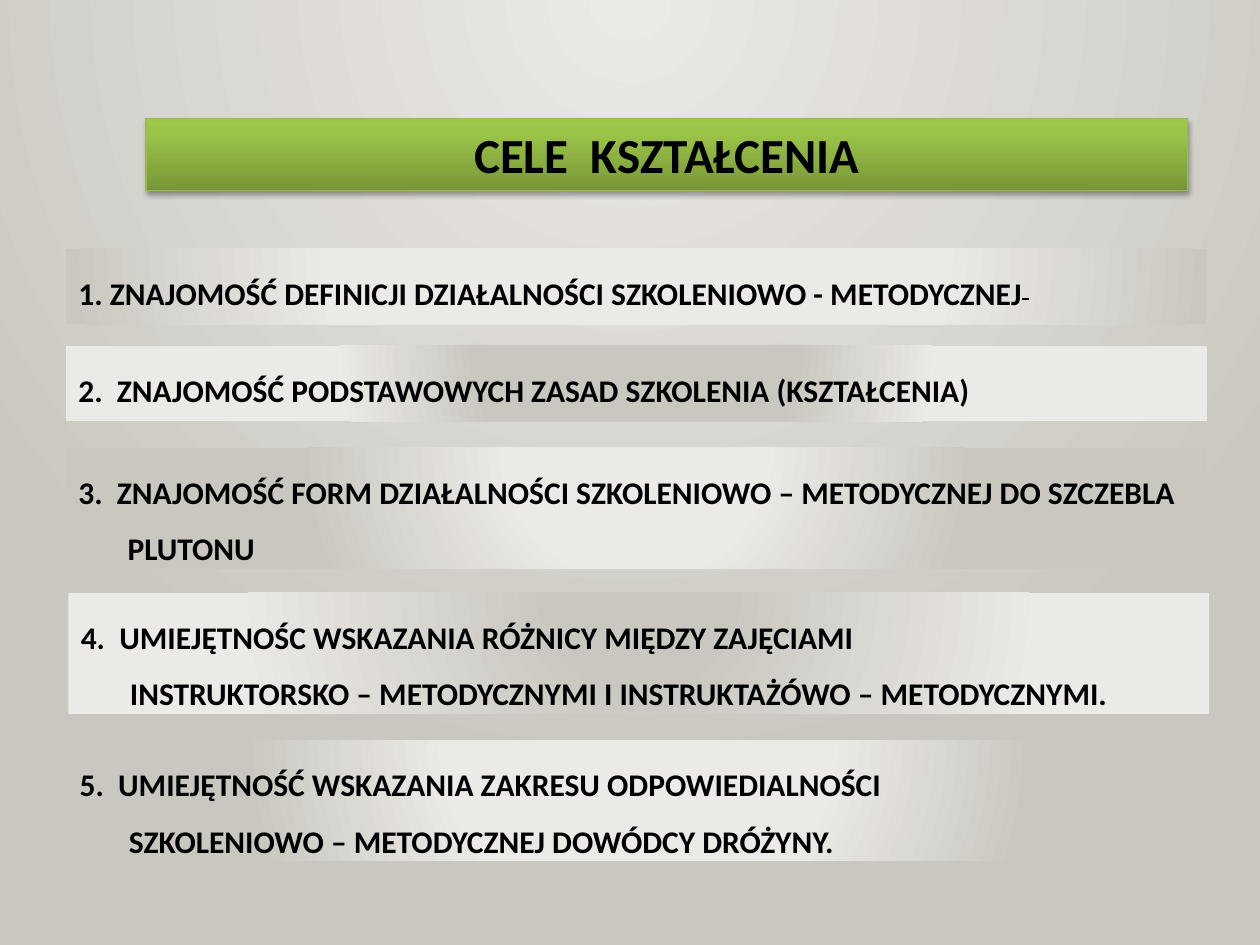
from lxml.etree import SubElement
from pptx import Presentation
from pptx.dml.color import RGBColor
from pptx.enum.shapes import MSO_SHAPE
from pptx.enum.text import MSO_ANCHOR, MSO_AUTO_SIZE, PP_ALIGN
from pptx.oxml.ns import qn
from pptx.util import Inches, Pt

# The slide is a grid of 100 columns by 75 rows, each 0.1 inch
CELL = Inches(0.1)
COLUMNS, ROWS = 100, 75
LIGHT, DARK, BLACK = "ECEAE7", "CAC7C1", "000000"

TITLE = "CELE  KSZTAŁCENIA"
TITLE_BOX = (11.6, 9.43, 82.65, 5.7)

GOAL_WIDTH = 90.55
# left, top, height, gradient stops from the centre outwards, text
GOALS = [
    (5.24, 19.75, 6, [(53, LIGHT), (100, DARK)],
     "1. ZNAJOMOŚĆ DEFINICJI DZIAŁALNOŚCI SZKOLENIOWO - METODYCZNEJ"),
    (5.24, 27.44, 6, [(28, DARK), (53, LIGHT)],
     "2.  ZNAJOMOŚĆ PODSTAWOWYCH ZASAD SZKOLENIA (KSZTAŁCENIA)"),
    (5.24, 35.53, 9.6, [(22, LIGHT), (59, DARK)],
     "3.  ZNAJOMOŚĆ FORM DZIAŁALNOŚCI SZKOLENIOWO – METODYCZNEJ DO SZCZEBLA PLUTONU"),
    (5.43, 47.04, 9.6, [(15, DARK), (71, LIGHT)],
     "4.  UMIEJĘTNOŚC WSKAZANIA RÓŻNICY MIĘDZY ZAJĘCIAMI\v"
     "INSTRUKTORSKO – METODYCZNYMI I INSTRUKTAŻÓWO – METODYCZNYMI."),
    (5.34, 58.75, 9.55, [(33, LIGHT), (69, DARK)],
     "5.  UMIEJĘTNOŚĆ WSKAZANIA ZAKRESU ODPOWIEDIALNOŚCI\v"
     "SZKOLENIOWO – METODYCZNEJ DOWÓDCY DRÓŻYNY."),
]


def color(value):
    return RGBColor.from_string(value)


def set_gradient(owner, fill, stops, angle=None):
    """Linear gradient when an angle is given, else circles from the top centre."""
    fill.gradient()
    gradient = owner.element.find(".//" + qn("a:gradFill"))
    for child in list(gradient):
        gradient.remove(child)
    stop_list = SubElement(gradient, qn("a:gsLst"))
    for position, value in stops:
        stop = SubElement(stop_list, qn("a:gs"), pos=str(position * 1000))
        SubElement(stop, qn("a:srgbClr"), val=value)
    if angle is None:
        circle = SubElement(gradient, qn("a:path"), path="circle")
        SubElement(circle, qn("a:fillToRect"), l="43000", t="0", r="43000", b="100000")
    else:
        SubElement(gradient, qn("a:lin"), ang=str(angle * 60000), scaled="0")


def add_shadow(shape, value, opacity, blur, distance, angle):
    effects = shape.element.spPr.find(qn("a:effectLst"))
    shadow = SubElement(effects, qn("a:outerShdw"), blurRad=str(Pt(blur)),
                        dist=str(Pt(distance)), dir=str(angle * 60000), rotWithShape="0")
    shade = SubElement(shadow, qn("a:srgbClr"), val=value)
    SubElement(shade, qn("a:alpha"), val=str(opacity * 1000))


def add_bar(shapes, box, text, size, stops, angle=None):
    """Filled rectangle with one bold paragraph; returns the shape and paragraph."""
    shape = shapes.add_shape(MSO_SHAPE.RECTANGLE, *(round(part * CELL) for part in box))
    shape.shadow.inherit = False
    set_gradient(shape, shape.fill, stops, angle)
    shape.line.fill.background()
    frame = shape.text_frame
    frame.word_wrap = True
    frame.vertical_anchor = MSO_ANCHOR.TOP
    paragraph = frame.paragraphs[0]
    paragraph.text = text
    paragraph.alignment = PP_ALIGN.LEFT
    font = paragraph.font
    font.name, font.size, font.bold = "Calibri", Pt(size), True
    font.color.rgb = color(BLACK)
    return shape, paragraph


def add_goals(slide):
    group = slide.shapes.add_group_shape()
    for number, (left, top, height, stops, text) in enumerate(GOALS, 1):
        box = (left, top, GOAL_WIDTH, height)
        _, paragraph = add_bar(group.shapes, box, text, 18, stops)
        paragraph.line_spacing = 1.5
        properties = paragraph._p.get_or_add_pPr()
        properties.set("marL", str(Inches(0.39)))
        properties.set("indent", str(Inches(-0.5)))
        if number == 1:
            # The first goal ends in a struck-through space, seen as a short line
            run = paragraph.add_run()
            run.text = " "
            run.font._element.set("strike", "sngStrike")


def add_title(slide, box):
    stops = [(0, "779737"), (80, "9BC348"), (100, "9DC746")]
    shape, paragraph = add_bar(slide.shapes, box, TITLE, 28, stops, angle=270)
    shape.text_frame.auto_size = MSO_AUTO_SIZE.SHAPE_TO_FIT_TEXT
    shape.line.color.rgb = color("98B955")
    shape.line.width = Pt(0.75)
    add_shadow(shape, BLACK, opacity=35, blur=3.1, distance=1.8, angle=90)
    paragraph.alignment = PP_ALIGN.CENTER


def main():
    presentation = Presentation()
    presentation.slide_width = COLUMNS * CELL
    presentation.slide_height = ROWS * CELL
    slide = presentation.slides.add_slide(presentation.slide_layouts[6])
    set_gradient(slide, slide.background.fill, [(0, LIGHT), (100, DARK)])
    add_goals(slide)
    add_title(slide, TITLE_BOX)
    presentation.save("out.pptx")


if __name__ == "__main__":
    main()
